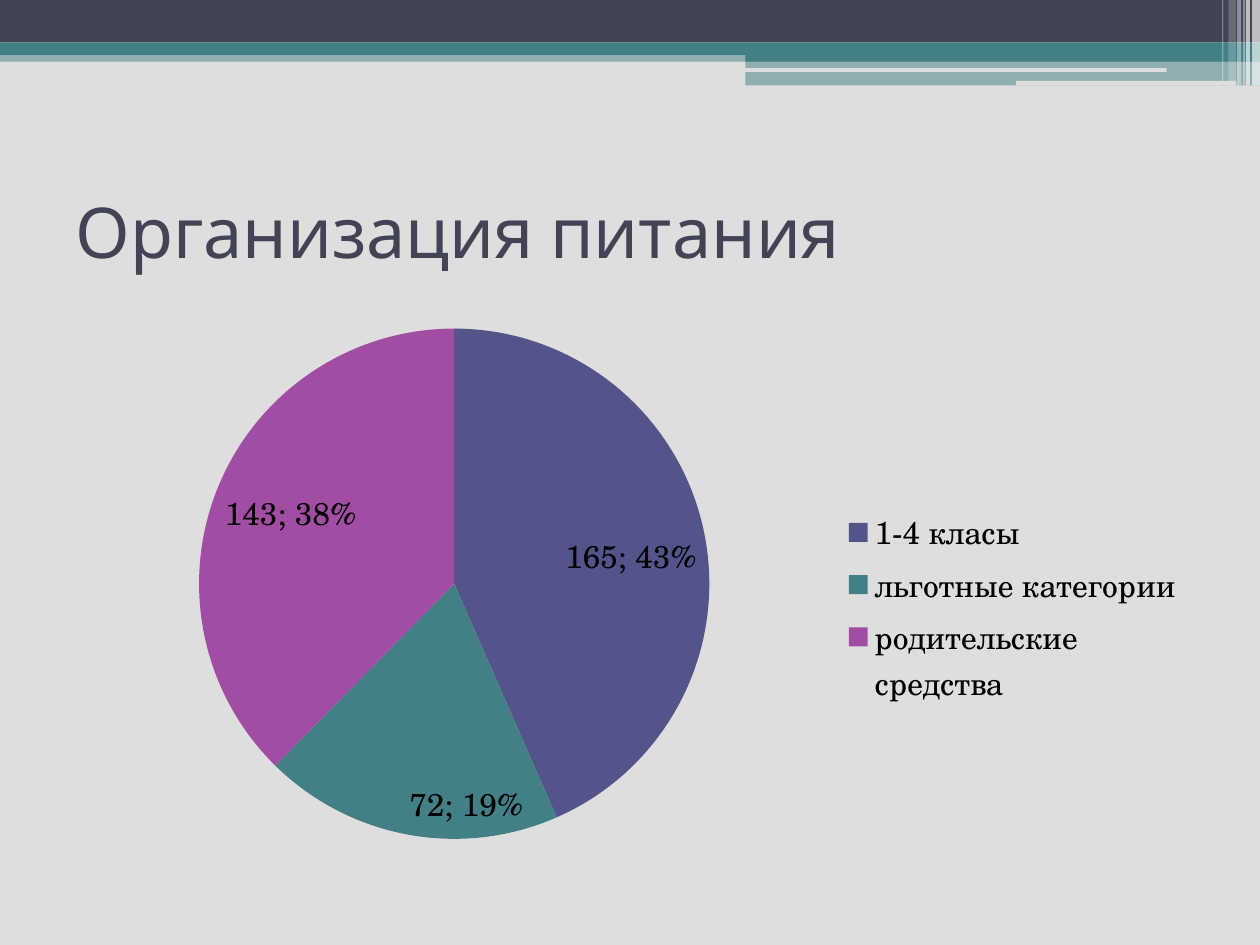
from dataclasses import dataclass

from lxml.etree import SubElement
from pptx import Presentation
from pptx.chart.data import CategoryChartData
from pptx.dml.color import RGBColor
from pptx.enum.chart import XL_CHART_TYPE, XL_LABEL_POSITION, XL_LEGEND_POSITION
from pptx.enum.shapes import MSO_SHAPE
from pptx.enum.text import MSO_ANCHOR, PP_ALIGN
from pptx.oxml import parse_xml
from pptx.oxml.ns import nsdecls, qn
from pptx.util import Pt

PAPER, DARK, TEAL, WHITE = "DEDEDE", "424456", "438086", "FFFFFF"


@dataclass
class Bar:
    """A header bar; lengths in points, opacity in percent."""
    left: float
    top: float
    width: float
    height: float
    color: str
    opacity: int = 100
    rounded: bool = False


BARS = [
    # Full-width bands
    Bar(0, 28.8, 720, 6.5, TEAL, 50),
    Bar(0, 0, 720, 24.2, DARK),
    Bar(0, 24.2, 720, 7.2, TEAL),
    # Right-hand bands and the light strips over them
    Bar(426, 28.2, 294, 7, TEAL),
    Bar(426, 34.6, 294, 14.2, TEAL, 50),
    Bar(425.5, 38.9, 241.2, 2.2, PAPER, rounded=True),
    Bar(580.5, 46.2, 126, 2.7, PAPER, rounded=True),
    # Vertical stripes at the edge
    Bar(715.5, 0, 4.5, 48.8, WHITE, 65),
    Bar(712, 0, 2.2, 48.8, WHITE, 65),
    Bar(710.5, 0, 0.7, 48.8, WHITE, 60),
    Bar(707, 0, 2.2, 48.8, WHITE, 40),
    Bar(702, 0, 4.3, 46.2, WHITE, 20),
    Bar(698.4, 0, 0.7, 46.2, WHITE, 30),
]

# Category, value, slice colour
SLICES = [
    ("1-4 класы", 165, "53548A"),
    ("льготные категории", 72, "438086"),
    ("родительские средства", 143, "A04DA3"),
]


def set_fill(fill, color: str) -> None:
    fill.solid()
    fill.fore_color.rgb = RGBColor.from_string(color)


def set_font(font, name: str, size: float, color: str) -> None:
    font.name, font.size = name, Pt(size)
    font.color.rgb = RGBColor.from_string(color)


def place(sp, left: float, top: float, width: float, height: float) -> None:
    sp.left, sp.top, sp.width, sp.height = map(Pt, (left, top, width, height))


def write(tf, text: str, *, font: str, size: float, color: str,
          align=PP_ALIGN.LEFT, anchor=MSO_ANCHOR.MIDDLE) -> None:
    tf.word_wrap, tf.vertical_anchor = True, anchor
    p = tf.paragraphs[0]
    p.alignment = align
    r = p.add_run()
    r.text = text
    set_font(r.font, font, size, color)


def add_bar(s, bar: Bar) -> None:
    kind = MSO_SHAPE.ROUNDED_RECTANGLE if bar.rounded else MSO_SHAPE.RECTANGLE
    sp = s.shapes.add_shape(kind, *map(Pt, (bar.left, bar.top, bar.width, bar.height)))
    sp.shadow.inherit = False
    sp.line.fill.background()
    set_fill(sp.fill, bar.color)
    if bar.opacity < 100:
        clr = sp.fill._xPr.find(qn("a:solidFill"))[0]
        SubElement(clr, qn("a:alpha")).set("val", str(bar.opacity * 1000))


def set_plot_layout(chart, x: float, y: float, w: float, h: float) -> None:
    """Fix the inner plot area, in fractions of the chart."""
    area = chart._chartSpace.chart.plotArea
    for old in area.findall(qn("c:layout")):
        area.remove(old)
    sizes = "".join(f'<c:{k} val="{v}"/>' for k, v in zip("xywh", (x, y, w, h)))
    area.insert(0, parse_xml(
        f'<c:layout {nsdecls("c")}><c:manualLayout><c:layoutTarget val="inner"/>'
        f'<c:xMode val="edge"/><c:yMode val="edge"/>{sizes}</c:manualLayout></c:layout>'))


def add_pie(s, left: float, top: float, width: float, height: float) -> None:
    names, values, colors = zip(*SLICES)
    data = CategoryChartData()
    data.categories = names
    data.add_series("Series 1", values)
    chart = s.shapes.add_chart(
        XL_CHART_TYPE.PIE, *map(Pt, (left, top, width, height)), data).chart
    set_font(chart.font, "TeX Gyre Schola", 18, "000000")
    chart.has_title = False
    chart.has_legend = True
    chart.legend.position = XL_LEGEND_POSITION.RIGHT
    chart.legend.include_in_layout = False
    set_plot_layout(chart, 0.12, 0.03, 0.45, 0.86)

    plot = chart.plots[0]
    plot.vary_by_categories = True
    series = plot.series[0]
    for i, color in enumerate(colors):
        set_fill(series.points[i].format.fill, color)

    # Labels such as "165; 43%"
    labels = series.data_labels
    labels.show_value = labels.show_percentage = True
    labels.position = XL_LABEL_POSITION.INSIDE_END
    separator = parse_xml(f'<c:separator {nsdecls("c")}>; </c:separator>')
    labels._element.find(qn("c:showBubbleSize")).addnext(separator)


def main() -> None:
    prs = Presentation()
    prs.slide_width, prs.slide_height = Pt(720), Pt(540)
    s = prs.slides.add_slide(prs.slide_layouts[5])
    set_fill(s.background.fill, PAPER)

    # Header decoration
    for bar in BARS:
        add_bar(s, bar)

    # Title
    title = s.shapes.title
    place(title, 36, 90, 648, 84)
    write(title.text_frame, "Организация питания", font="Karla", size=40, color=DARK)

    # Chart
    add_pie(s, 36, 177, 648, 340.5)
    prs.save("out.pptx")


if __name__ == "__main__":
    main()
